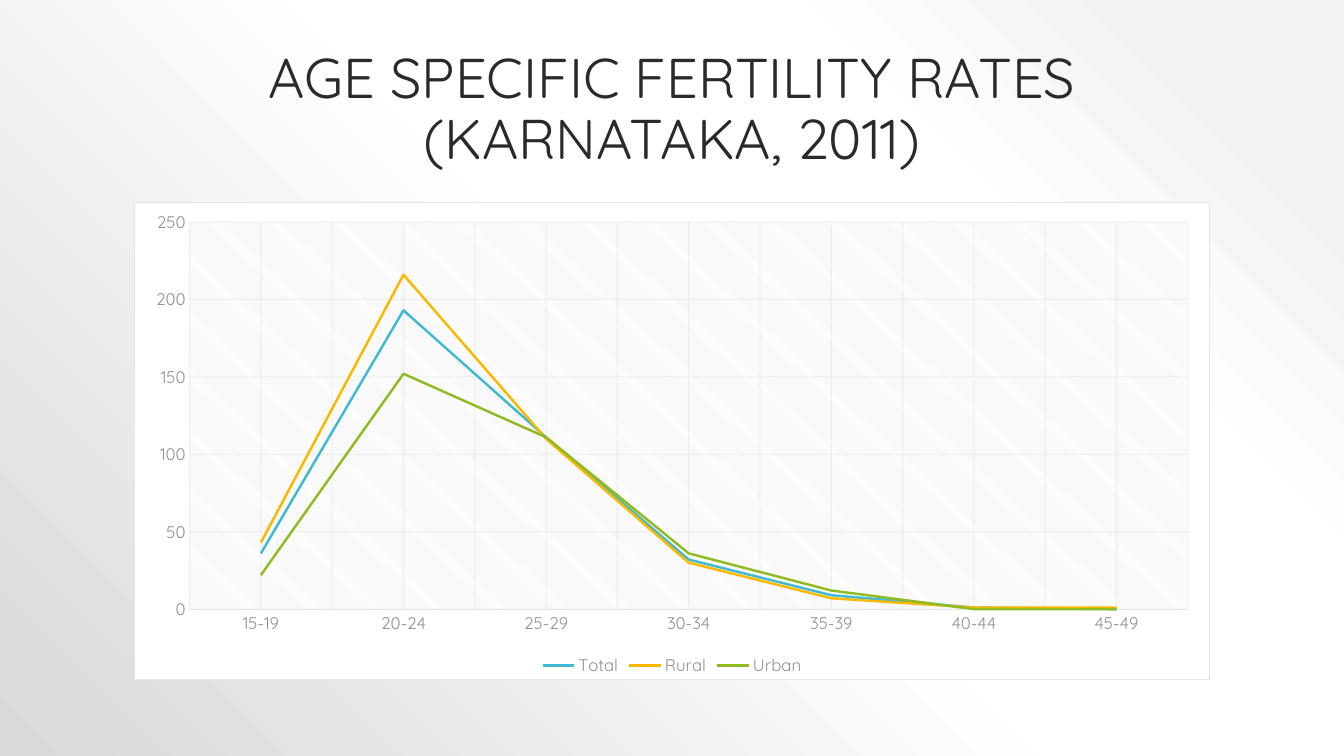
"""Build a slide with a line chart of age specific fertility rates."""
from copy import deepcopy
from pptx import Presentation
from pptx.chart.data import CategoryChartData as Data
from pptx.dml.color import RGBColor as RGB
from pptx.enum.chart import XL_CHART_TYPE as Kind, XL_LEGEND_POSITION as Side
from pptx.enum.chart import XL_MARKER_STYLE as Mark, XL_TICK_MARK as Tick
from pptx.enum.text import MSO_ANCHOR as Anchor, PP_ALIGN as Align
from pptx.oxml import parse_xml
from pptx.oxml.ns import qn
from pptx.util import Inches, Pt

TITLE = "AGE SPECIFIC FERTILITY RATES (KARNATAKA, 2011)"
AGES = ["15-19", "20-24", "25-29", "30-34", "35-39", "40-44", "45-49"]
RATES = [
    ("Total", "40BAD2", (36, 193, 111, 32, 9, 1, 0)),
    ("Rural", "FAB900", (43, 216, 110, 30, 7, 1, 1)),
    ("Urban", "90BB23", (22, 152, 111, 36, 12, 0, 0)),
]
STOPS = [(10, "F2F2F2"), (28, "FFFFFF"), (48, "FFFFFF"), (100, "D9D9D9")]
FACE, INK, GREY, RULE = "Quicksand", "2A2A2A", "909090", "E5E5E5"
LEFT, WIDE = Inches(1.33), Inches(10.67)
DRAW = 'xmlns:a="http://schemas.openxmlformats.org/drawingml/2006/main"'
CHART = 'xmlns:c="http://schemas.openxmlformats.org/drawingml/2006/chart"'


def color(code):
    return RGB.from_string(code)


def style(font, size, code):
    font.name, font.size = FACE, Pt(size)
    font.color.rgb = color(code)


def stroke(line, code, width):
    line.color.rgb = color(code)
    line.width = Pt(width)


def clr(code):
    return f'<a:srgbClr val="{code}"/>'


def paint_back(slide):
    slide.background.fill.solid()
    props = slide._element.cSld.find(qn("p:bg")).find(qn("p:bgPr"))
    stops = "".join(f'<a:gs pos="{pos * 1000}">{clr(code)}</a:gs>'
                    for pos, code in STOPS)
    grad = parse_xml(
        f'<a:gradFill {DRAW} rotWithShape="1"><a:gsLst>{stops}</a:gsLst>'
        '<a:path path="circle"><a:fillToRect l="100000" b="100000"/></a:path>'
        '</a:gradFill>')
    props.replace(props[0], grad)


def add_title(slide):
    frame = slide.shapes.add_textbox(LEFT, Inches(0.3), WIDE, Inches(1.45)).text_frame
    frame.word_wrap, frame.vertical_anchor = True, Anchor.BOTTOM
    para = frame.paragraphs[0]
    para.text, para.alignment, para.line_spacing = TITLE, Align.CENTER, 0.9
    style(para.font, 40, INK)


def set_axis(axis):
    axis.major_tick_mark = axis.minor_tick_mark = Tick.NONE
    style(axis.tick_labels.font, 12, GREY)
    axis.has_major_gridlines = True
    grid = axis.major_gridlines.format.line
    stroke(grid, RULE, 0.75)
    major = axis._element.find(qn("c:majorGridlines"))
    tint = next(major.iter(qn("a:srgbClr")))
    tint.append(parse_xml(f'<a:alpha {DRAW} val="54000"/>'))
    return major


def add_rates(slide):
    data = Data()
    data.categories = AGES
    for name, _, vals in RATES:
        data.add_series(name, vals)
    chart = slide.shapes.add_chart(
        Kind.LINE, LEFT, Inches(2), WIDE, Inches(4.75), data).chart
    style(chart.font, 10, "545454")
    chart.has_title = False
    chart.has_legend = True
    chart.legend.position = Side.BOTTOM
    chart.legend.include_in_layout = False
    style(chart.legend.font, 12, GREY)

    ages, scale = chart.category_axis, chart.value_axis
    major = set_axis(ages)
    set_axis(scale)
    ages.has_minor_gridlines = True
    minor = ages._element.find(qn("c:minorGridlines"))
    minor.append(deepcopy(major[0]))
    stroke(ages.format.line, RULE, 0.75)
    scale.format.line.fill.background()
    scale.minimum_scale, scale.maximum_scale, scale.major_unit = 0, 250, 50

    plot = chart.plots[0]
    plot.vary_by_categories = False
    for line, (_, code, _) in zip(plot.series, RATES):
        line.smooth = False
        line.marker.style = Mark.NONE
        stroke(line.format.line, code, 1.75)

    space = chart._chartSpace
    frame = parse_xml(
        f'<c:spPr {CHART} {DRAW}><a:solidFill>{clr("FFFFFF")}</a:solidFill>'
        f'<a:ln w="9525"><a:solidFill>{clr(RULE)}</a:solidFill></a:ln></c:spPr>')
    space.find(qn("c:txPr")).addprevious(frame)
    hatch = parse_xml(
        f'<c:spPr {CHART} {DRAW}><a:pattFill prst="ltDnDiag">'
        f'<a:fgClr>{clr(RULE)}</a:fgClr><a:bgClr>{clr("FFFFFF")}</a:bgClr>'
        '</a:pattFill><a:ln><a:noFill/></a:ln></c:spPr>')
    next(space.iter(qn("c:plotArea"))).append(hatch)


def main():
    deck = Presentation()
    deck.slide_width, deck.slide_height = Inches(13.33), Inches(7.5)
    slide = deck.slides.add_slide(deck.slide_layouts[6])
    paint_back(slide)
    add_title(slide)
    add_rates(slide)
    deck.save("out.pptx")


if __name__ == "__main__":
    main()
